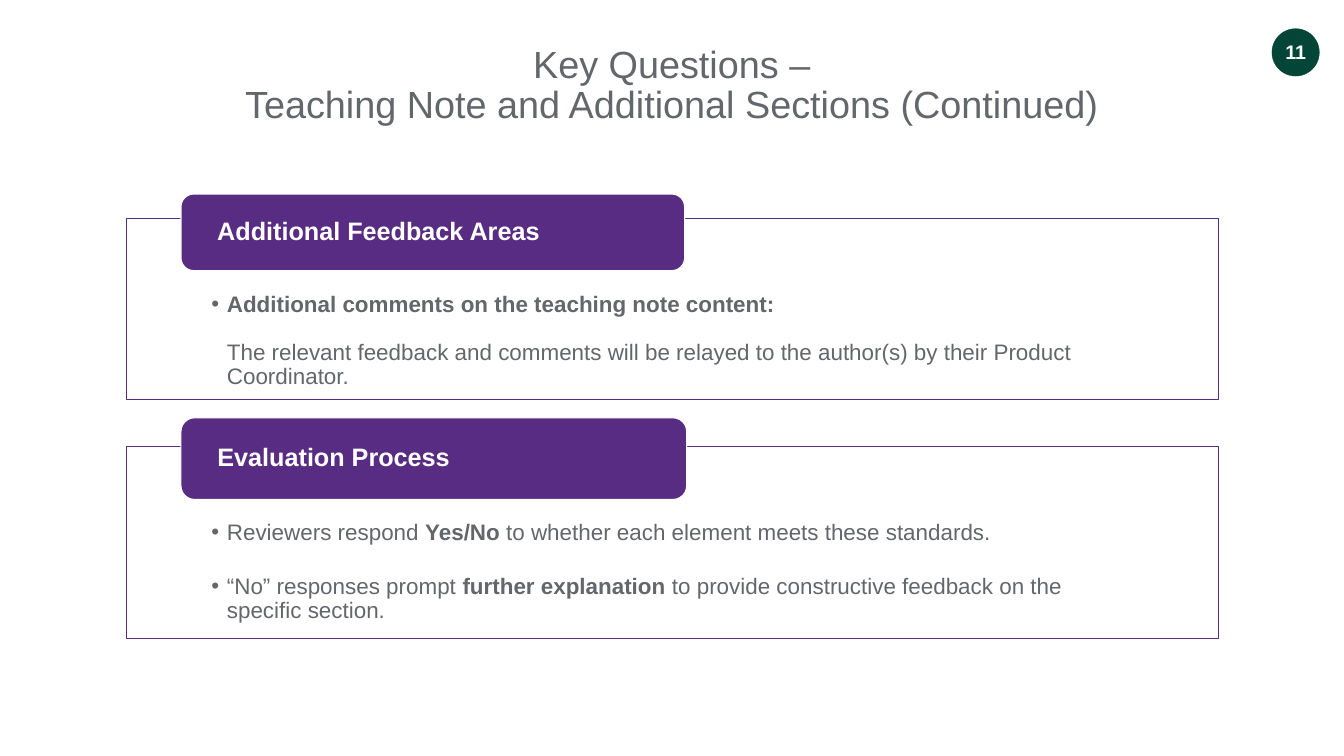
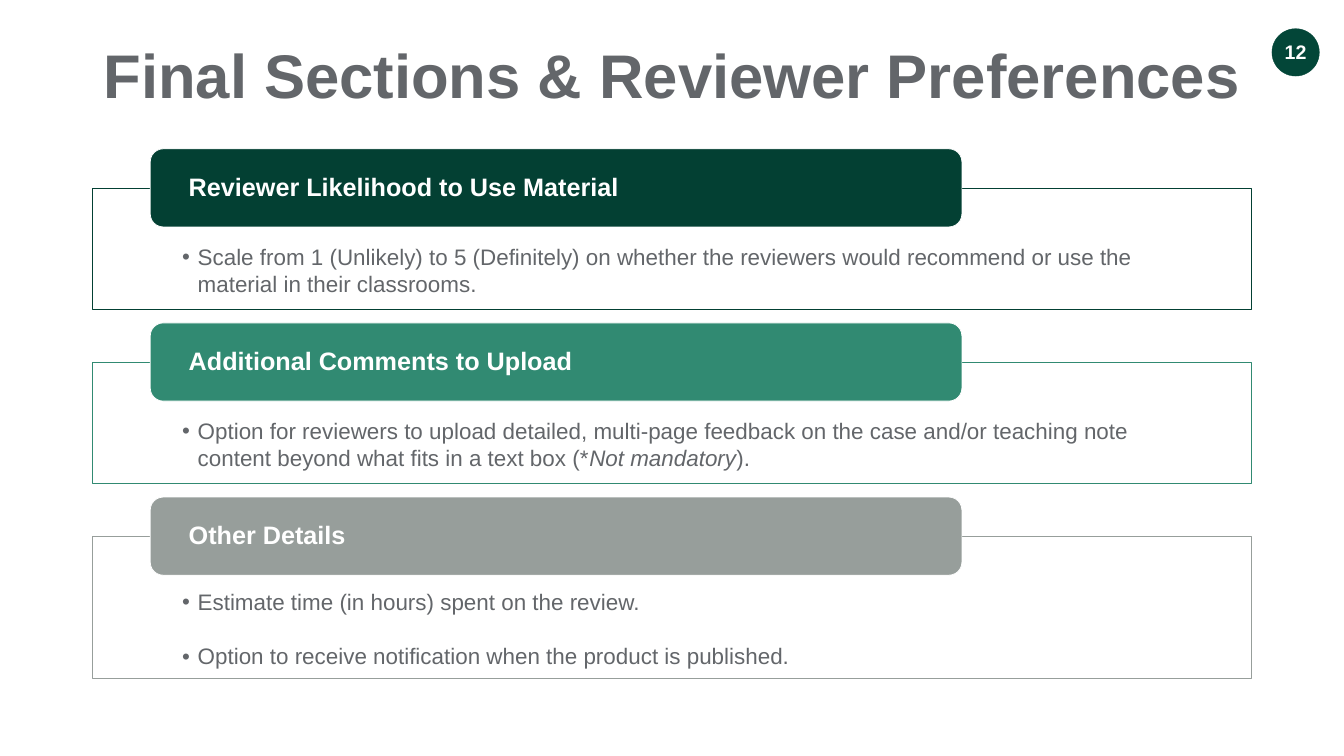
from dataclasses import dataclass

from lxml.etree import SubElement
from pptx import Presentation
from pptx.dml.color import RGBColor
from pptx.enum.shapes import MSO_SHAPE as Preset
from pptx.enum.text import MSO_ANCHOR as Anchor, PP_ALIGN as Align
from pptx.oxml.ns import qn
from pptx.util import Pt

FONT = "Arial"
COLORS = {
    "text": "63666A",
    "white": "FFFFFF",
    "badge": "034638",
    "purple": "582C83",
    "forest": "034033",
    "green": "318A72",
    "grey": "979E9B",
}
TITLE_LEFT, TITLE_TOP, TITLE_WIDTH = 131.8, 57.6, 1655.3
BULLET_INDENT = 22.3
BULLET_GAP = 43


@dataclass
class Span:
    text: str
    bold: bool = False
    italic: bool = False


@dataclass
class Point:
    spans: list[Span]
    gap: float = 0
    bullet: bool = True


@dataclass
class Card:
    heading: str
    color: str
    top: float
    height: float
    tab_top: float
    tab_width: float
    tab_height: float
    points: list[Point]
    spacing: float = 0.9


@dataclass
class CardStyle:
    left: float
    width: float
    tab_left: float
    tab_inset: float
    tab_line: float
    side_inset: float
    top_inset: float


# Shared helpers
def rgb(name: str) -> RGBColor:
    return RGBColor.from_string(COLORS[name])


def style_run(run, size: float, color: str, bold=False, italic=False) -> None:
    run.font.name = FONT
    run.font.size = Pt(size)
    run.font.bold = bold
    run.font.italic = italic
    run.font.color.rgb = rgb(color)


def set_insets(frame, left: float, top: float, right: float, bottom: float) -> None:
    frame.margin_left, frame.margin_top = Pt(left), Pt(top)
    frame.margin_right, frame.margin_bottom = Pt(right), Pt(bottom)


def add_box(page, preset, left: float, top: float, width: float, height: float,
            fill: str, line: str, line_width: float):
    box = page.shapes.add_shape(preset, Pt(left), Pt(top), Pt(width), Pt(height))
    box.shadow.inherit = False
    box.fill.solid()
    box.fill.fore_color.rgb = rgb(fill)
    box.line.color.rgb = rgb(line)
    box.line.width = Pt(line_width)
    return box


def add_bullet(para, bullet: bool) -> None:
    properties = para._p.get_or_add_pPr()
    properties.set("marL", str(Pt(BULLET_INDENT)))
    properties.set("indent", str(-Pt(BULLET_INDENT) if bullet else 0))
    if bullet:
        SubElement(properties, qn("a:buFont")).set("typeface", FONT)
        SubElement(properties, qn("a:buChar")).set("char", "•")


# Title and page number
def add_title(page, text: str, size: float, height: float, bold: bool) -> None:
    box = page.shapes.add_textbox(Pt(TITLE_LEFT), Pt(TITLE_TOP), Pt(TITLE_WIDTH), Pt(height))
    frame = box.text_frame
    frame.word_wrap = True
    set_insets(frame, 14.4, 7.2, 14.4, 7.2)
    frame.text = text
    for para in frame.paragraphs:
        para.alignment = Align.CENTER
        para.line_spacing = 0.9
        style_run(para.runs[0], size, "text", bold)


def add_badge(page, number: int) -> None:
    badge = add_box(page, Preset.OVAL, 1816.6, 41, 67.7, 67.7, "badge", "badge", 0.5)
    frame = badge.text_frame
    frame.word_wrap = False
    frame.vertical_anchor = Anchor.MIDDLE
    set_insets(frame, 0, 0, 0, 3)
    frame.text = str(number)
    para = frame.paragraphs[0]
    para.alignment = Align.CENTER
    style_run(para.runs[0], 28, "white", True)


# Framed card with a heading tab
def add_card(page, card: Card, style: CardStyle) -> None:
    body = add_box(page, Preset.RECTANGLE, style.left, card.top, style.width, card.height,
                   "white", card.color, 1)
    frame = body.text_frame
    frame.word_wrap = True
    frame.vertical_anchor = Anchor.TOP
    set_insets(frame, style.side_inset, style.top_inset, style.side_inset, 18)
    for index, point in enumerate(card.points):
        para = frame.add_paragraph() if index else frame.paragraphs[0]
        add_bullet(para, point.bullet)
        para.alignment = Align.LEFT
        para.line_spacing = card.spacing
        if point.gap:
            para.space_before = Pt(point.gap)
        for span in point.spans:
            run = para.add_run()
            run.text = span.text
            style_run(run, 32, "text", span.bold, span.italic)

    tab = add_box(page, Preset.ROUNDED_RECTANGLE, style.tab_left, card.tab_top,
                  card.tab_width, card.tab_height, card.color, "white", style.tab_line)
    frame = tab.text_frame
    frame.word_wrap = True
    frame.vertical_anchor = Anchor.MIDDLE
    set_insets(frame, style.tab_inset, 0, style.tab_inset, 0)
    frame.text = card.heading
    para = frame.paragraphs[0]
    para.alignment = Align.LEFT
    para.line_spacing = 0.9
    style_run(para.runs[0], 36, "white", True)


# Slide content
QUESTION_STYLE = CardStyle(180.7, 1558.8, 258.5, 46.4, 1.5, 121, 106.6)
QUESTION_CARDS = [
    Card("Additional Feedback Areas", "purple", 312.5, 257.8, 277.2, 719.3, 109.4, [
        Point([Span("Additional comments on the teaching note content:", bold=True)]),
        Point([Span("The relevant feedback and comments will be relayed to the author(s) "
                    "by their Product Coordinator.")], gap=34, bullet=False),
    ]),
    Card("Evaluation Process", "purple", 637.2, 274.3, 596.9, 722.2, 116.6, [
        Point([Span("Reviewers respond "), Span("Yes/No ", bold=True),
               Span("to whether each element meets these standards.")]),
        Point([Span("“No” responses prompt "), Span("further explanation ", bold=True),
               Span("to provide constructive feedback on the specific section.")],
              gap=BULLET_GAP),
    ]),
]

FINAL_STYLE = CardStyle(TITLE_LEFT, TITLE_WIDTH, 214.6, 49.5, 1, 128.2, 78.5)
FINAL_TOP, FINAL_PITCH, TAB_RISE = 268.6, 248.75, 56
FINAL_SECTIONS = [
    ("Reviewer Likelihood to Use Material", "forest", 172.8, 1.0, [
        Point([Span("Scale from 1 (Unlikely) to 5 (Definitely) on whether the reviewers would "
                    "recommend or use the material in their classrooms.")]),
    ]),
    ("Additional Comments to Upload", "green", 172.8, 1.0, [
        Point([Span("Option for reviewers to upload detailed, multi-page feedback on the case "
                    "and/or teaching note content beyond what fits in a text box (*"),
               Span("Not mandatory", italic=True), Span(").")]),
    ]),
    ("Other Details", "grey", 202.3, 0.9, [
        Point([Span("Estimate time (in hours) spent on the review.")]),
        Point([Span("Option to receive notification when the product is published.")],
              gap=BULLET_GAP),
    ]),
]


def final_cards() -> list[Card]:
    cards = []
    for index, (heading, color, height, spacing, points) in enumerate(FINAL_SECTIONS):
        top = FINAL_TOP + index * FINAL_PITCH
        cards.append(Card(heading, color, top, height, top - TAB_RISE, 1159.2, 111.6,
                          points, spacing))
    return cards


def add_page(deck, number: int, cards: list[Card], style: CardStyle):
    page = deck.slides.add_slide(deck.slide_layouts[6])
    add_badge(page, number)
    for card in cards:
        add_card(page, card, style)
    return page


def main() -> None:
    deck = Presentation()
    deck.slide_width, deck.slide_height = Pt(1919.52), Pt(1080)

    questions = add_page(deck, 11, QUESTION_CARDS, QUESTION_STYLE)
    add_title(questions, "Key Questions –\nTeaching Note and Additional Sections (Continued)",
              54, 149.8, False)

    final = add_page(deck, 12, final_cards(), FINAL_STYLE)
    add_title(final, "Final Sections & Reviewer Preferences", 88, 110.9, True)

    deck.save("out.pptx")


if __name__ == "__main__":
    main()
